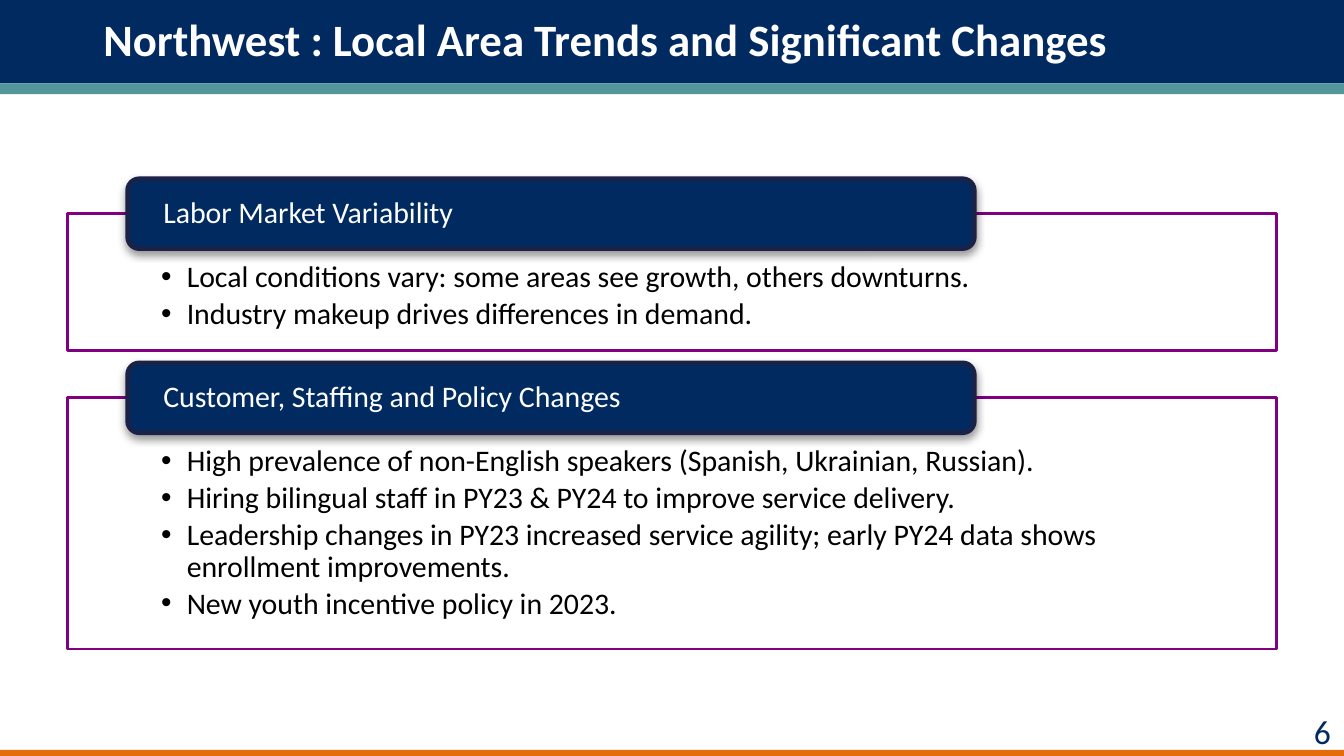
from dataclasses import dataclass
from typing import Optional

from lxml.etree import SubElement
from pptx import Presentation
from pptx.dml.color import RGBColor
from pptx.enum.shapes import MSO_SHAPE as Shape
from pptx.enum.text import MSO_ANCHOR as Anchor, PP_ALIGN as Align
from pptx.oxml.ns import qn
from pptx.util import Inches, Pt

COLORS = {
    "navy": "012A60",
    "teal": "54979A",
    "orange": "E46C0A",
    "white": "FFFFFF",
    "black": "000000",
    "purple": "800080",
    "header_edge": "1A2247",
}
FONT = "Calibri"
HEADER_HEIGHT = 0.52
HEADER_RISE = 0.26
INDENT = 0.19


@dataclass
class Section:
    heading: str
    points: list[str]
    top: float
    height: float


SECTIONS = [
    Section(
        "Labor Market Variability",
        [
            "Local conditions vary: some areas see growth, others downturns.",
            "Industry makeup drives differences in demand.",
        ],
        1.59,
        1.02,
    ),
    Section(
        "Customer, Staffing and Policy Changes",
        [
            "High prevalence of non-English speakers (Spanish, Ukrainian, Russian).",
            "Hiring bilingual staff in PY23 & PY24 to improve service delivery.",
            "Leadership changes in PY23 increased service agility; "
            "early PY24 data shows enrollment improvements.",
            "New youth incentive policy in 2023.",
        ],
        2.96,
        1.87,
    ),
]


def color(name: str) -> RGBColor:
    return RGBColor.from_string(COLORS[name])


def add_box(page, left: float, top: float, width: float, height: float, fill: str,
            line: Optional[str] = None, line_width: float = 1.5, kind=Shape.RECTANGLE):
    box = page.shapes.add_shape(kind, Inches(left), Inches(top), Inches(width), Inches(height))
    box.shadow.inherit = False
    box.fill.solid()
    box.fill.fore_color.rgb = color(fill)
    if line:
        box.line.color.rgb = color(line)
        box.line.width = Pt(line_width)
    else:
        box.line.fill.background()
    return box


def add_text_box(page, left: float, top: float, width: float, height: float):
    return page.shapes.add_textbox(Inches(left), Inches(top), Inches(width), Inches(height))


def write(box, lines: list[str], *, size: int = 16, ink: str = "black", bold: bool = False,
          align=Align.LEFT, anchor=Anchor.TOP, side: float = 0.1, upper: float = 0.05,
          lower: float = 0.05, spacing: float = 0.9, after: float = 0,
          bullets: bool = False) -> None:
    frame = box.text_frame
    frame.word_wrap = True
    frame.vertical_anchor = anchor
    frame.margin_left = frame.margin_right = Inches(side)
    frame.margin_top, frame.margin_bottom = Inches(upper), Inches(lower)
    for index, line in enumerate(lines):
        para = frame.paragraphs[0] if index == 0 else frame.add_paragraph()
        para.alignment = align
        para.line_spacing = spacing
        para.space_after = Pt(after)
        if bullets:
            add_bullet(para)
        span = para.add_run()
        span.text = line
        span.font.name = FONT
        span.font.size = Pt(size)
        span.font.bold = bold
        span.font.color.rgb = color(ink)


def add_bullet(para) -> None:
    properties = para._p.get_or_add_pPr()
    properties.set("marL", str(Inches(INDENT)))
    properties.set("indent", str(-Inches(INDENT)))
    SubElement(properties, qn("a:buFont"), typeface="Arial")
    SubElement(properties, qn("a:buChar"), char="•")


def set_opacity(parent, percent: int) -> None:
    SubElement(parent, qn("a:alpha"), val=str(percent * 1000))


def add_shadow(box) -> None:
    effects = box._element.spPr.find(qn("a:effectLst"))
    shadow = SubElement(effects, qn("a:outerShdw"), blurRad=str(Pt(4.1)), dist=str(Pt(2)),
                        dir="5400000", rotWithShape="0")
    set_opacity(SubElement(shadow, qn("a:srgbClr"), val=COLORS["black"]), 40)


def add_section(page, section: Section) -> None:
    panel = add_box(page, 0.5, section.top, 9, section.height, "white", "purple")
    set_opacity(panel._element.spPr.find(f"{qn('a:solidFill')}/{qn('a:srgbClr')}"), 90)
    write(panel, section.points, side=0.7, upper=0.36, lower=0.12, after=2.4, bullets=True)
    header = add_box(page, 0.95, section.top - HEADER_RISE, 6.3, HEADER_HEIGHT, "navy",
                     "header_edge", 2.5, Shape.ROUNDED_RECTANGLE)
    add_shadow(header)
    write(header, [section.heading], ink="white", anchor=Anchor.MIDDLE,
          side=0.24, upper=0, lower=0)


def main() -> None:
    deck = Presentation()
    deck.slide_width = Inches(10)
    deck.slide_height = deck.slide_width * 9 // 16
    page = deck.slides.add_slide(deck.slide_layouts[6])
    add_box(page, 0, 0, 10, 0.62, "navy")
    add_box(page, 0, 0.62, 10, 0.08, "teal")
    number = add_text_box(page, 9.42, 5.24, 0.58, 0.4)
    write(number, ["6"], size=18, ink="navy", align=Align.RIGHT, spacing=1.0)
    add_box(page, 0, 5.58, 10, 0.05, "orange")
    title = add_text_box(page, 0.67, 0, 8.95, 0.62)
    write(title, ["Northwest : Local Area Trends and Significant Changes"],
          size=24, ink="white", bold=True, anchor=Anchor.MIDDLE)
    for section in SECTIONS:
        add_section(page, section)
    deck.save("out.pptx")


if __name__ == "__main__":
    main()
